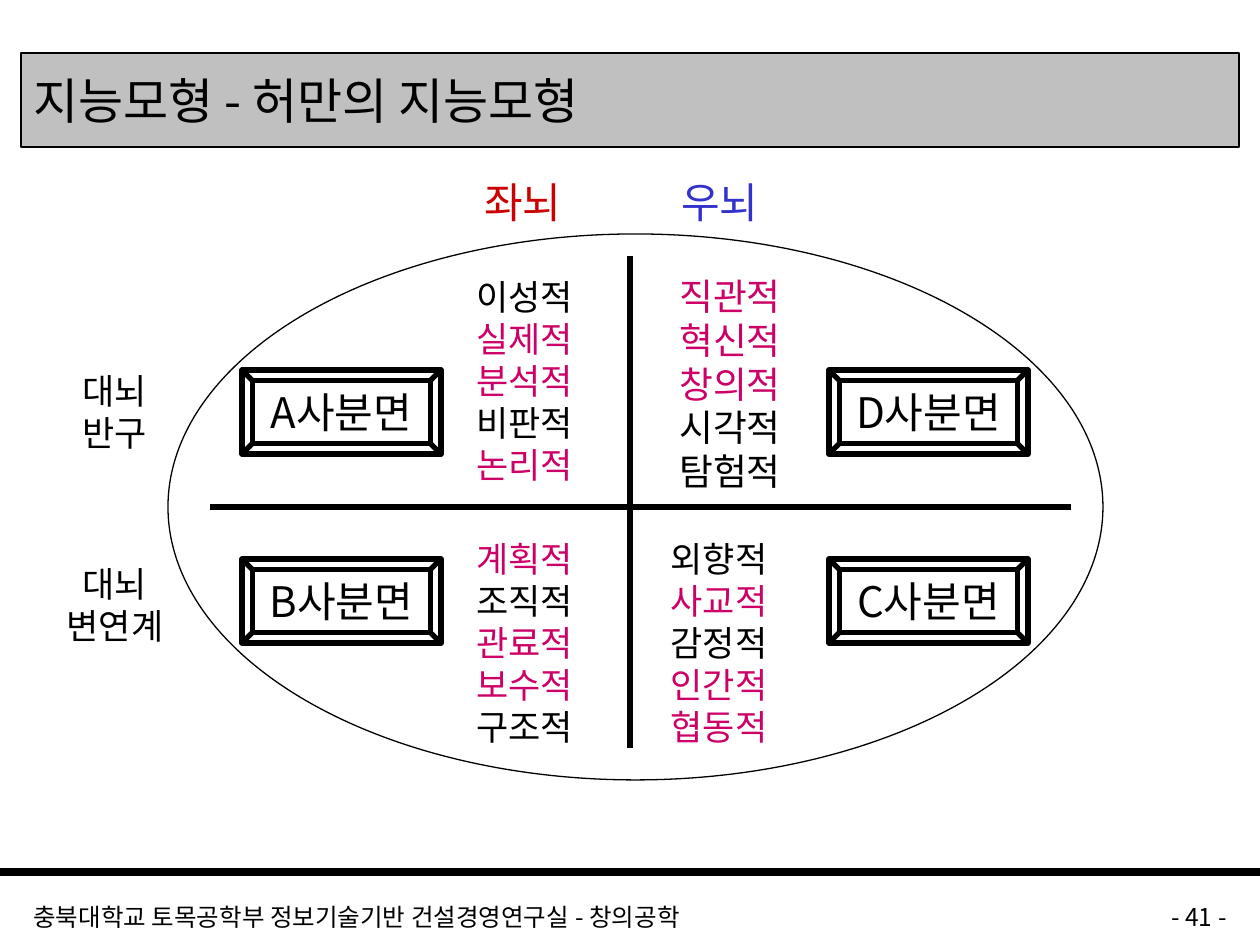
from lxml.etree import SubElement
from pptx import Presentation
from pptx.dml.color import RGBColor
from pptx.enum.shapes import MSO_CONNECTOR, MSO_SHAPE
from pptx.enum.text import MSO_ANCHOR, PP_ALIGN
from pptx.oxml.ns import qn
from pptx.util import Emu, Pt

EMU_PER_PX = 914400 // 126
FONT = "Noto Sans CJK KR"
BLACK = RGBColor(0x00, 0x00, 0x00)
GRAY = RGBColor(0xC0, 0xC0, 0xC0)
RED = RGBColor(0xCC, 0x00, 0x00)
BLUE = RGBColor(0x33, 0x33, 0xCC)
PINK = RGBColor(0xCC, 0x00, 0x66)

# name, name box left/top, word list left/top/width, size, words, highlighted words
QUADRANTS = [
    ("A사분면", (74, 136), (283, 32, 147), 20,
     "이성적 실제적 분석적 비판적 논리적", "실제적 분석적 논리적"),
    ("D사분면", (661, 136), (483, 29, 158), 21,
     "직관적 혁신적 창의적 시각적 탐험적", "직관적 혁신적 창의적"),
    ("C사분면", (661, 325), (472, 294, 158), 20,
     "외향적 사교적 감정적 인간적 협동적", "사교적 인간적 협동적"),
    ("B사분면", (74, 325), (283, 294, 147), 20,
     "계획적 조직적 관료적 보수적 구조적", "계획적 관료적 보수적"),
]


def px(value):
    return Emu(value * EMU_PER_PX)


def format_run(run, size, color):
    run.font.size = Pt(size)
    run.font.name = FONT
    run.font.color.rgb = color
    SubElement(run.font._element, qn("a:ea")).set("typeface", FONT)


def add_text(shapes, box, text, size, color=BLACK, align=PP_ALIGN.LEFT):
    """Add a text box with tight line spacing and return its text frame."""
    frame = shapes.add_textbox(*map(px, box)).text_frame
    frame.word_wrap = True
    # The fixed line height trims the top of the line; the inset restores it.
    frame.margin_top = px(6) + Pt(round(size * 0.12))
    frame.text = text
    for paragraph in frame.paragraphs:
        paragraph.alignment = align
        paragraph.line_spacing = Pt(round(size * 1.2))
        for run in paragraph.runs:
            format_run(run, size, color)
    return frame


def add_outline(shapes, kind, box, width, fill=None):
    shape = shapes.add_shape(kind, *map(px, box))
    shape.shadow.inherit = False
    if fill is None:
        shape.fill.background()
    else:
        shape.fill.solid()
        shape.fill.fore_color.rgb = fill
    shape.line.color.rgb = BLACK
    shape.line.width = Pt(width)
    return shape


def set_middle_text(shape, text, size, align):
    frame = shape.text_frame
    frame.vertical_anchor = MSO_ANCHOR.MIDDLE
    frame.text = text
    paragraph = frame.paragraphs[0]
    paragraph.alignment = align
    format_run(paragraph.runs[0], size, BLACK)


def add_line(shapes, start, end, width):
    line = shapes.add_connector(MSO_CONNECTOR.STRAIGHT, *map(px, start + end))
    line.line.color.rgb = BLACK
    line.line.width = Pt(width)
    SubElement(line._element.spPr, qn("a:effectLst"))


def add_footer(slide, left, top, width):
    add_line(slide.shapes, (left, top), (left + width, top), 4.5)
    add_text(slide.shapes, (left + 21, top + 20, 987, 32),
             "충북대학교 토목공학부 정보기술기반 건설경영연구실 - 창의공학", 14)
    add_text(slide.shapes, (left + width - 231, top + 20, 210, 32),
             "- 41 -", 14, align=PP_ALIGN.RIGHT)


def add_title(slide, box):
    bar = add_outline(slide.shapes, MSO_SHAPE.RECTANGLE, box, 0.75, GRAY)
    set_middle_text(bar, "지능모형 - 허만의 지능모형", 28, PP_ALIGN.LEFT)


def add_word_list(shapes, box, size, words, highlighted):
    """Add words that wrap one to a line, some of them highlighted."""
    frame = add_text(shapes, box, "", size, align=PP_ALIGN.CENTER)
    paragraph = frame.paragraphs[0]
    words = words.split()
    for word in words:
        run = paragraph.add_run()
        run.text = word if word == words[-1] else word + " "
        format_run(run, size, PINK if word in highlighted.split() else BLACK)


def add_brain_model(slide, left, top, width, height):
    shapes = slide.shapes.add_group_shape().shapes
    add_outline(shapes, MSO_SHAPE.OVAL, (left, top, width, height), 0.75)
    middle = top + height // 2
    add_line(shapes, (left + 42, middle), (left + width - 32, middle), 3)
    add_line(shapes, (left + 462, top + 22), (left + 462, top + 514), 3)
    for name, (name_x, name_y), (list_x, list_y, list_width), size, words, highlighted in QUADRANTS:
        add_word_list(shapes, (left + list_x, top + list_y, list_width, 223),
                      size, words, highlighted)
        bevel = add_outline(shapes, MSO_SHAPE.BEVEL,
                            (left + name_x, top + name_y, 199, 84), 3)
        bevel.text_frame.word_wrap = False
        set_middle_text(bevel, name, 24, PP_ALIGN.CENTER)


def add_headings(slide, left, top):
    for index, (text, color) in enumerate([("좌뇌", RED), ("우뇌", BLUE)]):
        add_text(slide.shapes, (left + index * 197, top, 116, 63), text, 24, color)


def add_side_labels(slide, left, top):
    for index, text in enumerate(["대뇌\n반구", "대뇌\n변연계"]):
        add_text(slide.shapes, (left, top + index * 193, 180, 97), text, 20,
                 align=PP_ALIGN.CENTER)


def main():
    presentation = Presentation()
    presentation.slide_width = px(1260)
    presentation.slide_height = px(945)
    slide = presentation.slides.add_slide(presentation.slide_layouts[6])
    add_footer(slide, 0, 872, 1260)
    add_title(slide, (21, 53, 1218, 94))
    add_brain_model(slide, 168, 234, 935, 546)
    add_headings(slide, 472, 165)
    add_side_labels(slide, 25, 360)
    presentation.save("out.pptx")


if __name__ == "__main__":
    main()
